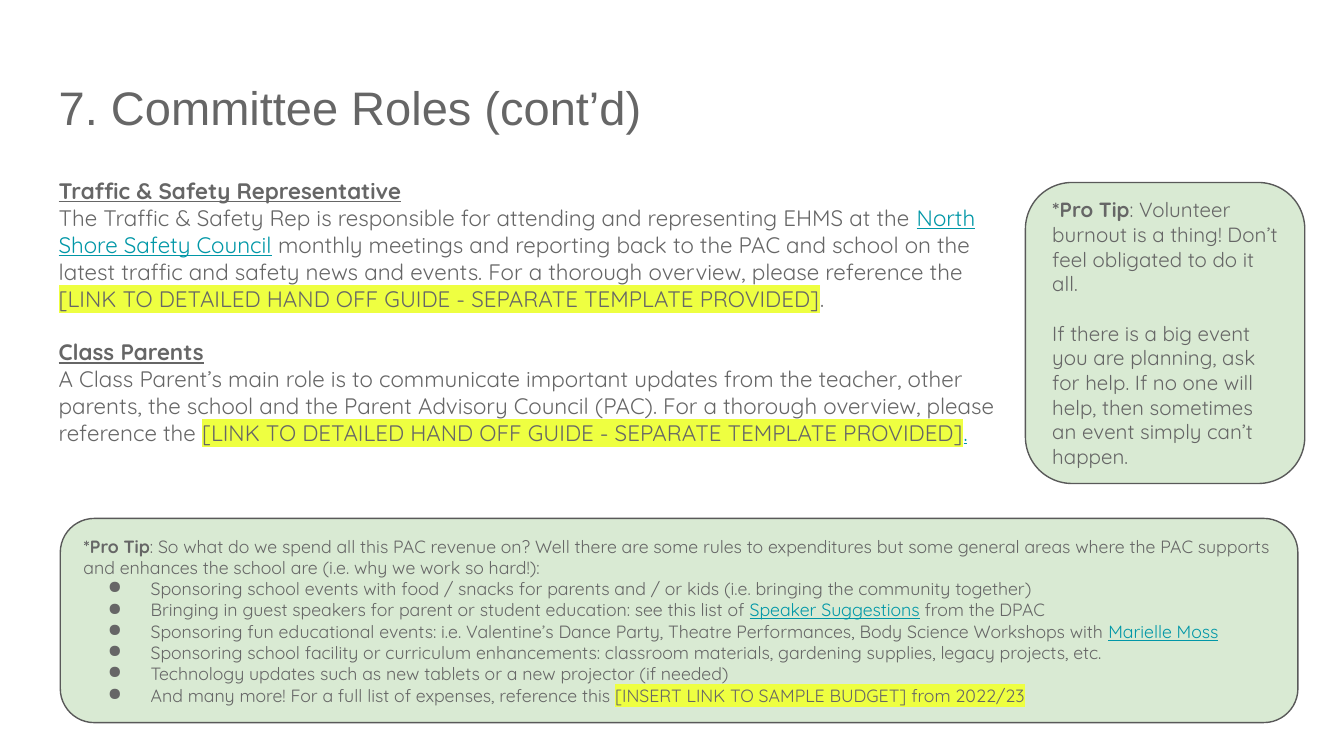
from lxml.etree import SubElement
from pptx import Presentation
from pptx.dml.color import RGBColor
from pptx.enum.shapes import MSO_SHAPE
from pptx.enum.text import MSO_ANCHOR, MSO_AUTO_SIZE, PP_ALIGN
from pptx.oxml import parse_xml
from pptx.oxml.ns import nsdecls, qn
from pptx.util import Cm, Pt

COLORS = {"text": "666666", "link": "0097A7", "mark": "EEFF41",
          "tip": "D9EAD3", "outline": "595959"}
FONT = "Quicksand"
LINE_HEIGHT = 1.2
INSET = Cm(0.25)

# A paragraph is a list of runs; a run is a pair of text and style.
TITLE = [[("7. Committee Roles (cont’d)", "plain")]]
GUIDE = ("[LINK TO DETAILED HAND OFF GUIDE - SEPARATE TEMPLATE PROVIDED]", "mark")
ROLES = [
    [("Traffic & Safety Representative", "heading")],
    [("The Traffic & Safety Rep is responsible for attending and representing "
      "EHMS at the ", "plain"),
     ("North Shore Safety Council", "link"),
     (" monthly meetings and reporting back to the PAC and school on the latest "
      "traffic and safety news and events. For a thorough overview, please "
      "reference the ", "plain"),
     GUIDE, (".", "plain")],
    [("Class Parents", "heading")],
    [("A Class Parent’s main role is to communicate important updates from the "
      "teacher, other parents, the school and the Parent Advisory Council (PAC). "
      "For a thorough overview, please reference the ", "plain"),
     GUIDE, (".", "link")],
]
BURNOUT_TIP = [
    [("*Pro Tip", "bold"),
     (": Volunteer burnout is a thing! Don’t feel obligated to do it all.", "plain")],
    [("If there is a big event you are planning, ask for help. If no one will "
      "help, then sometimes an event simply can’t happen.", "plain")],
]
SPENDING_TIP = [
    [("*Pro Tip", "bold"),
     (": So what do we spend all this PAC revenue on? Well there are some rules to "
      "expenditures but some general areas where the PAC supports and enhances the "
      "school are (i.e. why we work so hard!):", "plain")],
    [("Sponsoring school events with food / snacks for parents and / or kids "
      "(i.e. bringing the community together)", "plain")],
    [("Bringing in guest speakers for parent or student education: see this list "
      "of ", "plain"),
     ("Speaker Suggestions", "link"), (" from the DPAC", "plain")],
    [("Sponsoring fun educational events: i.e. Valentine’s Dance Party, Theatre "
      "Performances, Body Science Workshops with ", "plain"),
     ("Marielle Moss", "link")],
    [("Sponsoring school facility or curriculum enhancements: classroom materials, "
      "gardening supplies, legacy projects, etc.", "plain")],
    [("Technology updates such as new tablets or a new projector (if needed)", "plain")],
    [("And many more! For a full list of expenses, reference this ", "plain"),
     ("[INSERT LINK TO SAMPLE BUDGET] from 2022/23", "mark")],
]


def rgb(name):
    return RGBColor.from_string(COLORS[name])


def add_bullet(p):
    pPr = p._p.get_or_add_pPr()
    pPr.set("marL", str(Cm(1.27)))
    pPr.set("indent", str(-Cm(0.81)))
    color = SubElement(pPr, qn("a:buClr"))
    SubElement(color, qn("a:srgbClr"), val=COLORS["text"])
    SubElement(pPr, qn("a:buChar"), char="●")


def highlight(r):
    fill = r._r.get_or_add_rPr().find(qn("a:solidFill"))
    fill.addnext(parse_xml(f'<a:highlight {nsdecls("a")}>'
                           f'<a:srgbClr val="{COLORS["mark"]}"/></a:highlight>'))


def write_text(sp, paragraphs, size, font=FONT, anchor=MSO_ANCHOR.TOP,
               gap_before=None, bullets_from=None):
    """Fill sp; leave one line free before paragraph gap_before."""
    tf = sp.text_frame
    tf.word_wrap = True
    tf.auto_size = MSO_AUTO_SIZE.NONE
    tf.vertical_anchor = anchor
    tf.margin_left = tf.margin_right = tf.margin_top = tf.margin_bottom = INSET
    for i, runs in enumerate(paragraphs):
        p = tf.add_paragraph() if i else tf.paragraphs[0]
        p.alignment = PP_ALIGN.LEFT
        p.space_before = Pt(size * LINE_HEIGHT if i == gap_before else 0)
        if bullets_from is not None and i >= bullets_from:
            add_bullet(p)
        for text, style in runs:
            r = p.add_run()
            r.text = text
            r.font.name = font
            r.font.size = Pt(size)
            r.font.bold = style in ("heading", "bold")
            r.font.underline = style in ("heading", "link")
            r.font.color.rgb = rgb("link" if style == "link" else "text")
            if style == "mark":
                highlight(r)


def add_tip(slide, box, paragraphs, size, **text_format):
    sp = slide.shapes.add_shape(MSO_SHAPE.FLOWCHART_ALTERNATE_PROCESS, *map(Cm, box))
    sp.shadow.inherit = False
    sp.fill.solid()
    sp.fill.fore_color.rgb = rgb("tip")
    sp.line.color.rgb = rgb("outline")
    sp.line.width = Pt(0.75)
    write_text(sp, paragraphs, size, anchor=MSO_ANCHOR.MIDDLE, **text_format)


def main():
    prs = Presentation()
    prs.slide_width, prs.slide_height = Cm(25.4), Cm(14.29)
    slide = prs.slides.add_slide(prs.slide_layouts[5])

    title = slide.shapes.title
    title.left, title.top, title.width, title.height = map(Cm, (0.86, 1.24, 23.67, 1.6))
    write_text(title, TITLE, 25.2, font="Arial")

    roles = slide.shapes.add_textbox(*map(Cm, (0.86, 3.1, 18.52, 6.71)))
    write_text(roles, ROLES, 12, gap_before=2)

    add_tip(slide, (19.38, 3.45, 5.28, 5.69), BURNOUT_TIP, 11, gap_before=1)
    add_tip(slide, (1.14, 9.8, 23.39, 3.86), SPENDING_TIP, 9.5, bullets_from=1)
    prs.save("out.pptx")


if __name__ == "__main__":
    main()
